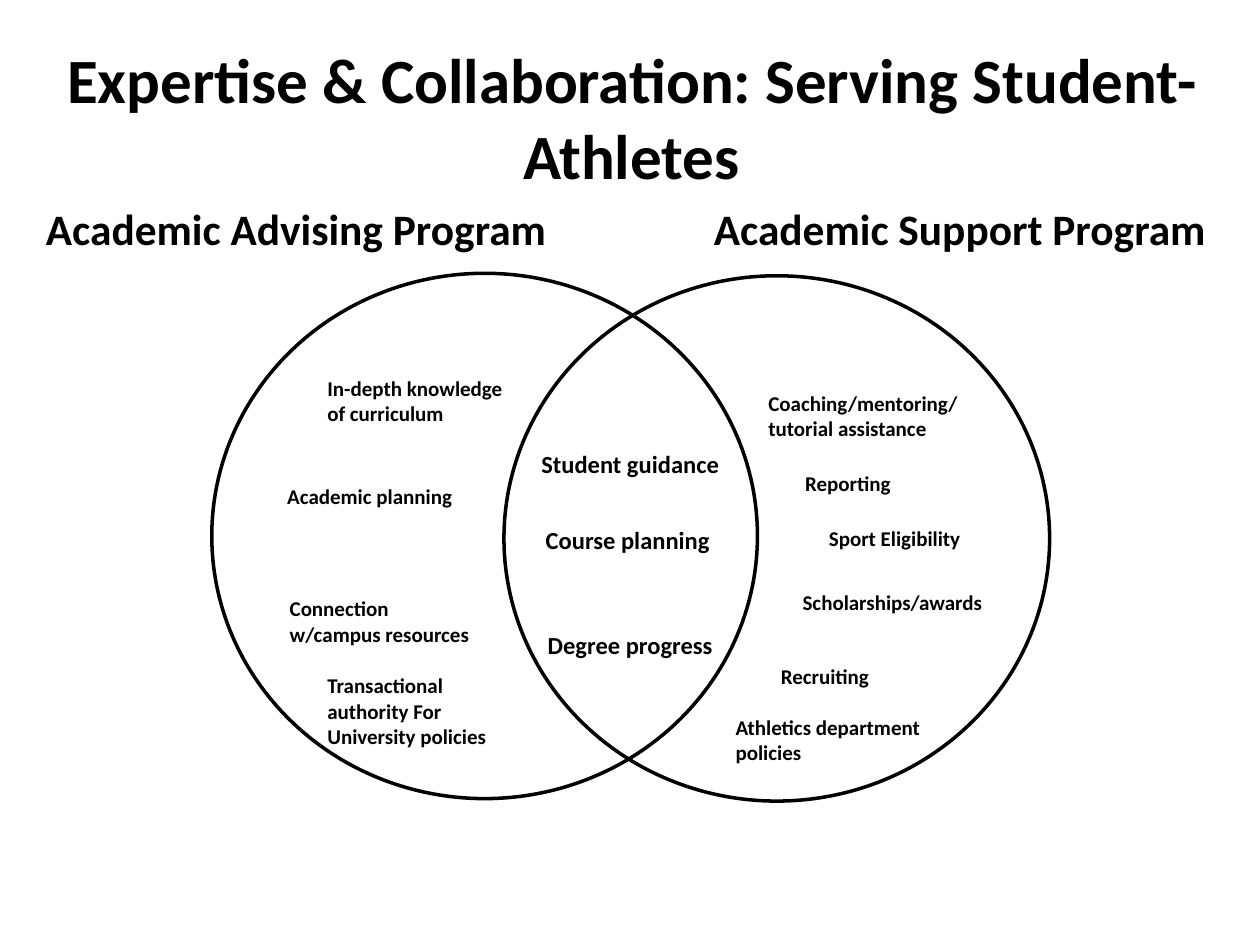
from pptx import Presentation
from pptx.dml.color import RGBColor
from pptx.enum.shapes import MSO_SHAPE
from pptx.enum.text import MSO_ANCHOR, PP_ALIGN
from pptx.util import Cm, Pt

BLACK = "000000"

# left, top, width, height in cm
CIRCLES = [(4.27, 5.51, 11, 10.59), (10.16, 5.56, 11, 10.59)]
HEADINGS = [("Academic Advising Program", 0.36),
            ("Academic Support Program", 13.74)]
SIDE_LABELS = [
    # Advising only
    ("In-depth knowledge of curriculum", 6.35, 7.44, 4.45, 1.27),
    ("Academic planning", 5.54, 9.63, 4.22, 0.76),
    ("Connection w/campus resources", 5.59, 11.89, 4.19, 1.27),
    ("Transactional authority For University policies", 6.35, 13.44, 4.45, 1.8),
    # Support only
    ("Coaching/mentoring/\ntutorial assistance", 15.24, 7.75, 4.7, 1.27),
    ("Reporting", 15.98, 9.37, 2.69, 0.76),
    ("Sport Eligibility", 16.46, 10.46, 3.94, 0.76),
    ("Scholarships/awards", 15.93, 11.76, 4.45, 0.76),
    ("Recruiting", 15.49, 13.26, 4.45, 0.76),
    ("Athletics department policies", 14.58, 14.27, 4.88, 1.27),
]
SHARED_LABELS = [
    ("Student guidance", 10.57, 8.92),
    ("Course planning", 10.52, 10.46),
    ("Degree progress", 10.57, 12.57),
]


def rgb(value):
    return RGBColor.from_string(value)


def add_text(s, text, x, y, w, h, size=12, align=PP_ALIGN.LEFT,
             anchor=MSO_ANCHOR.TOP, color=BLACK):
    tf = s.shapes.add_textbox(Cm(x), Cm(y), Cm(w), Cm(h)).text_frame
    tf.word_wrap = True
    tf.vertical_anchor = anchor
    tf.text = text
    for p in tf.paragraphs:
        p.alignment = align
        for r in p.runs:
            r.font.name = "Calibri"
            r.font.size = Pt(size)
            r.font.bold = True
            r.font.color.rgb = rgb(color)


def add_circle(s, x, y, w, h):
    sp = s.shapes.add_shape(MSO_SHAPE.OVAL, Cm(x), Cm(y), Cm(w), Cm(h))
    sp.shadow.inherit = False
    sp.fill.background()
    sp.line.color.rgb = rgb(BLACK)
    sp.line.width = Pt(2)


def main():
    prs = Presentation()
    prs.slide_width, prs.slide_height = Cm(25.4), Cm(19.05)
    s = prs.slides.add_slide(prs.slide_layouts[6])

    # Title and program headings
    add_text(s, "Expertise & Collaboration: Serving Student-Athletes",
             0.74, 0.76, 23.98, 3.18, size=36, align=PP_ALIGN.CENTER,
             anchor=MSO_ANCHOR.MIDDLE)
    for text, x in HEADINGS:
        add_text(s, text, x, 3.48, 11.23, 1.78, size=24.8,
                 align=PP_ALIGN.CENTER, anchor=MSO_ANCHOR.BOTTOM)

    # Venn diagram
    for box in CIRCLES:
        add_circle(s, *box)
    for label in SIDE_LABELS:
        add_text(s, *label)
    for text, x, y in SHARED_LABELS:
        add_text(s, text, x, y, 4.27, 0.86, size=14, align=PP_ALIGN.CENTER)

    prs.save("out.pptx")


if __name__ == "__main__":
    main()
